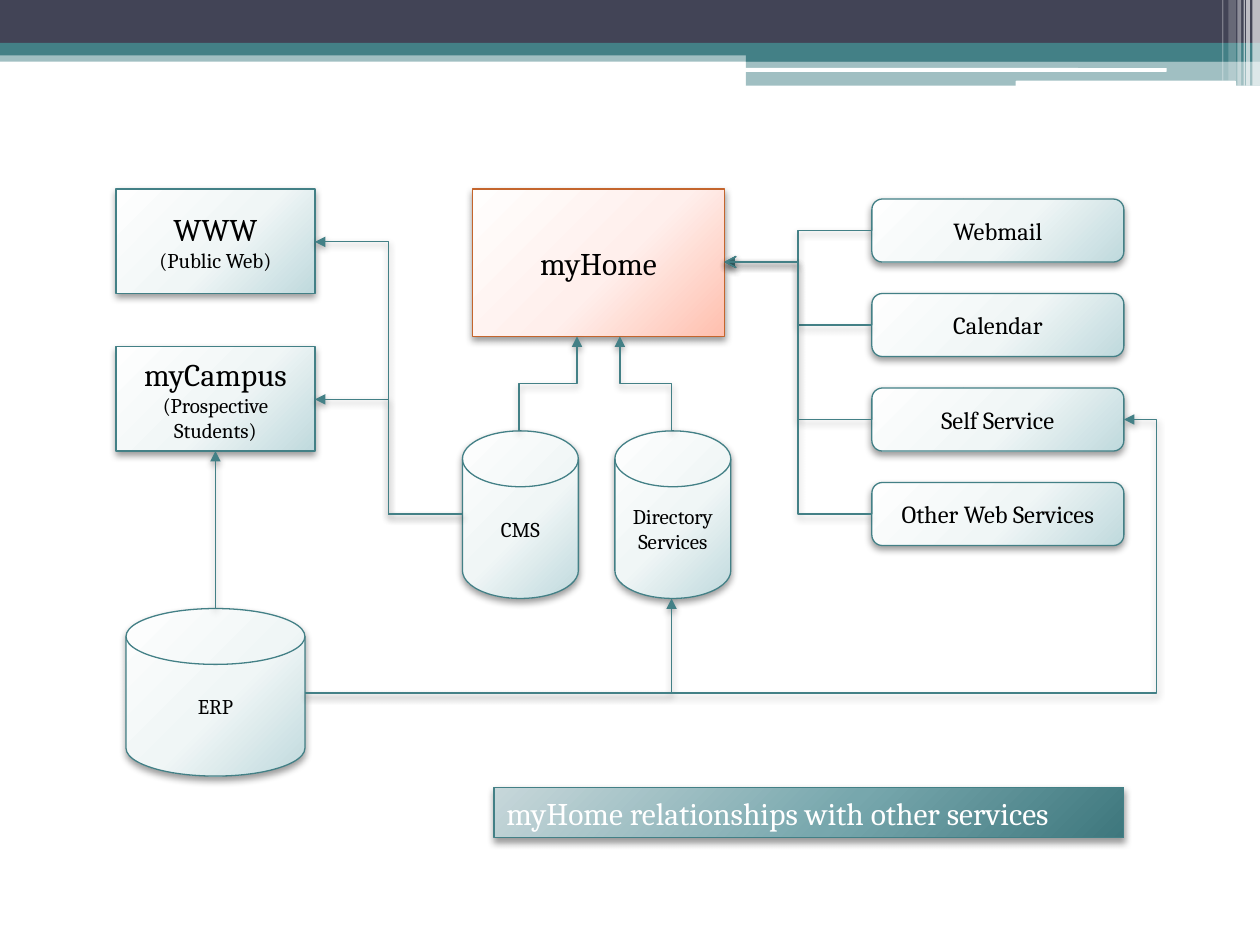
from lxml import etree
from pptx import Presentation
from pptx import util as u
from pptx.dml.color import RGBColor
from pptx.enum import shapes, text
from pptx.oxml.ns import qn

SHAPE = shapes.MSO_SHAPE
TEAL, NAVY, WHITE, BLACK, ORANGE = "438086", "424456", "FFFFFF", "000000", "C4652D"
PALE = ("FEFEFE", "F0F6F6", "BFD9DD")
PEACH = ("FFFEFD", "FFEFEC", "FFBFAE")
DEEP = ("C7D7DA", "77A7AD", "3E777D")


def rgb(value):
    return RGBColor.from_string(value)


def sub(parent, tag, **attrs):
    """Add a DrawingML child with the given attributes."""
    return etree.SubElement(parent, qn("a:" + tag), {k: str(v) for k, v in attrs.items()})


class Diagram:
    font = "Cambria"
    line_width = u.Pt(0.75)

    def __init__(self, prs):
        self.slide = prs.slides.add_slide(prs.slide_layouts[6])

    def bar(self, x, y, w, h, color, opacity=100, kind=SHAPE.RECTANGLE):
        s = self.slide.shapes.add_shape(kind, *map(u.Inches, (x, y, w, h)))
        s.shadow.inherit = False
        s.fill.solid()
        s.fill.fore_color.rgb = rgb(color)
        s.line.fill.background()
        if opacity < 100:
            clr = s._element.spPr.find(".//" + qn("a:srgbClr"))
            sub(clr, "alpha", val=opacity * 1000)

    def box(self, kind, x, y, w, h, lines, colors=PALE, line=TEAL,
            ink=BLACK, align=text.PP_ALIGN.CENTER, anchor=text.MSO_ANCHOR.MIDDLE):
        """Outlined gradient shape; lines holds (text, size) pairs."""
        s = self.slide.shapes.add_shape(kind, *map(u.Inches, (x, y, w, h)))
        self.gradient(s, colors)
        s.line.color.rgb = rgb(line)
        s.line.width = self.line_width
        s.shadow.inherit = False
        self.soft_shadow(s._element.spPr.find(qn("a:effectLst")))
        tf = s.text_frame
        tf.word_wrap = True
        tf.vertical_anchor = anchor
        for i, (words, size) in enumerate(lines):
            p = tf.paragraphs[0] if i == 0 else tf.add_paragraph()
            p.text = words
            p.alignment = align
            p.font.name = self.font
            p.font.size = u.Pt(size)
            p.font.color.rgb = rgb(ink)
        return s

    def gradient(self, s, colors):
        grad = etree.Element(qn("a:gradFill"), rotWithShape="1")
        stops = sub(grad, "gsLst")
        for pos, color in zip((0, 55, 100), colors):
            sub(sub(stops, "gs", pos=pos * 1000), "srgbClr", val=color)
        sub(sub(grad, "path", path="circle"), "fillToRect",
            l=-40000, t=-90000, r=140000, b=190000)
        s._element.spPr.find(qn("a:prstGeom")).addnext(grad)

    def soft_shadow(self, effects):
        shadow = sub(effects, "outerShdw", blurRad=u.Pt(4.1), dist=u.Pt(2),
                     dir=5400000, algn="ctr", rotWithShape=0)
        sub(sub(shadow, "srgbClr", val=BLACK), "alpha", val=40000)

    def arrow(self, start, end, kind=shapes.MSO_CONNECTOR.ELBOW, head="triangle"):
        c = self.slide.shapes.add_connector(kind, *map(u.Inches, (*start, *end)))
        c.line.color.rgb = rgb(TEAL)
        c.line.width = self.line_width
        sub(c.line._get_or_add_ln(), "tailEnd", type=head)
        self.soft_shadow(sub(c._element.spPr, "effectLst"))
        return c

    def bend(self, start, end, adj=None, preset="bentConnector3", head="triangle"):
        """Elbow that leaves its start sideways; adj places the middle leg."""
        c = self.arrow(start, end, head=head)
        geom = c._element.spPr.find(qn("a:prstGeom"))
        geom.set("prst", preset)
        if adj is not None:
            guides = geom.find(qn("a:avLst"))
            if guides is None:
                guides = sub(geom, "avLst")
            sub(guides, "gd", name="adj1", fmla=f"val {round(adj * 100000)}")

    def rise(self, start, end):
        """Elbow that leaves its start upwards: a sideways one turned by 270 degrees."""
        (x1, y1), (x2, y2) = start, end
        cx, cy = (x1 + x2) / 2, (y1 + y2) / 2
        half_w, half_h = (y1 - y2) / 2, (x2 - x1) / 2
        c = self.arrow((cx - half_w, cy - half_h), (cx + half_w, cy + half_h))
        c._element.spPr.find(qn("a:xfrm")).set("rot", str(270 * 60000))


def main():
    prs = Presentation()
    prs.slide_width, prs.slide_height = u.Inches(10), u.Inches(7.5)
    d = Diagram(prs)

    # Header bands
    d.bar(0, 0.4, 10, 0.09, TEAL, 50)
    d.bar(0, 0, 10, 0.34, NAVY)
    d.bar(0, 0.34, 10, 0.1, TEAL)
    d.bar(5.92, 0.39, 4.08, 0.1, TEAL)
    d.bar(5.92, 0.48, 4.08, 0.2, TEAL, 50)
    d.bar(5.91, 0.54, 3.35, 0.03, WHITE, kind=SHAPE.ROUNDED_RECTANGLE)
    d.bar(8.06, 0.64, 1.75, 0.05, WHITE, kind=SHAPE.ROUNDED_RECTANGLE)

    # Header stripes
    for x, w, h, opacity in ((9.94, 0.06, 0.68, 65), (9.89, 0.03, 0.68, 65),
                             (9.87, 0.01, 0.68, 60), (9.82, 0.03, 0.68, 40),
                             (9.75, 0.06, 0.64, 20), (9.7, 0.01, 0.64, 30)):
        d.bar(x, 0, w, h, WHITE, opacity)

    # Sites and data stores
    process, disk = SHAPE.FLOWCHART_PROCESS, SHAPE.FLOWCHART_MAGNETIC_DISK
    d.box(process, 3.75, 1.5, 2, 1.17, [("myHome", 18)], PEACH, ORANGE)
    d.box(disk, 3.67, 3.42, 0.92, 1.33, [("CMS", 12)])
    d.box(disk, 4.88, 3.42, 0.92, 1.33, [("Directory Services", 12)])
    prospects = d.box(process, 0.92, 2.75, 1.58, 0.83,
                      [("myCampus", 18), ("(Prospective Students)", 12)])
    d.box(process, 0.92, 1.5, 1.58, 0.83, [("WWW", 18), ("(Public Web)", 12)])
    d.box(disk, 1, 4.83, 1.42, 1.33, [("ERP", 12)])

    # Data store arrows
    d.rise((5.33, 3.42), (4.92, 2.67))
    d.rise((4.12, 3.42), (4.58, 2.67))
    for y in (3.17, 1.92):
        d.bend((3.67, 4.08), (2.5, y))
    d.bend((2.42, 5.5), (5.33, 4.75), preset="bentConnector2")

    # Web services feeding myHome
    services = ("Webmail", "Calendar", "Self Service", "Other Web Services")
    for i, name in enumerate(services):
        y = 1.58 + 0.75 * i
        d.box(SHAPE.FLOWCHART_ALTERNATE_PROCESS, 6.92, y, 2, 0.5, [(name, 14)])
    for i in range(len(services)):
        d.bend((6.92, 1.83 + 0.75 * i), (5.75, 2.08), head="arrow" if i else "triangle")

    # Caption
    d.box(SHAPE.RECTANGLE, 3.92, 6.25, 5, 0.4,
          [("myHome relationships with other services", 18)], DEEP, ink=WHITE,
          align=text.PP_ALIGN.LEFT, anchor=text.MSO_ANCHOR.TOP)

    # ERP arrows
    c = d.arrow((1.71, 4.83), (1.71, 3.58), shapes.MSO_CONNECTOR.STRAIGHT)
    c.end_connect(prospects, 2)
    d.bend((2.42, 5.5), (8.92, 3.33), adj=1.04)

    prs.save("out.pptx")


if __name__ == "__main__":
    main()
